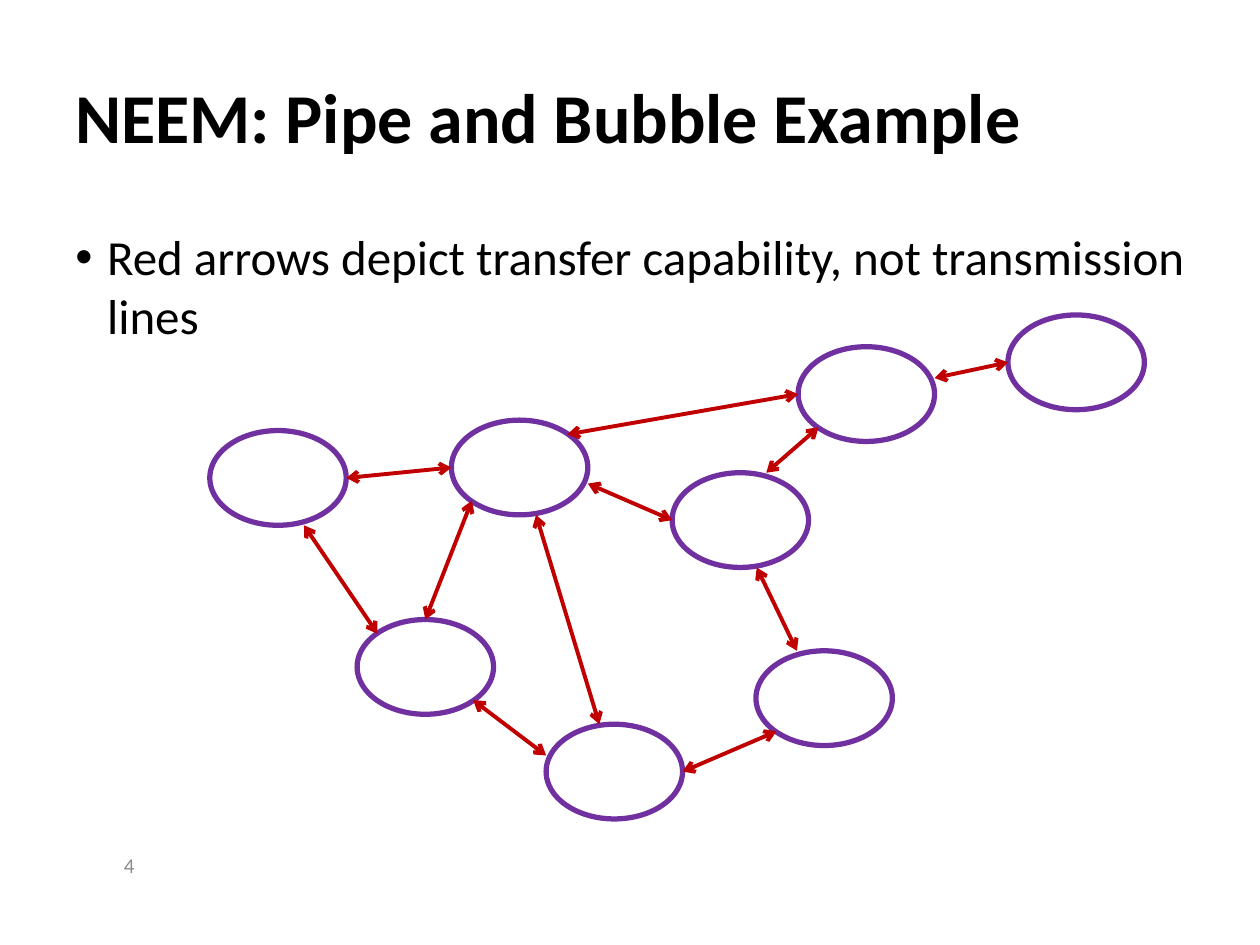
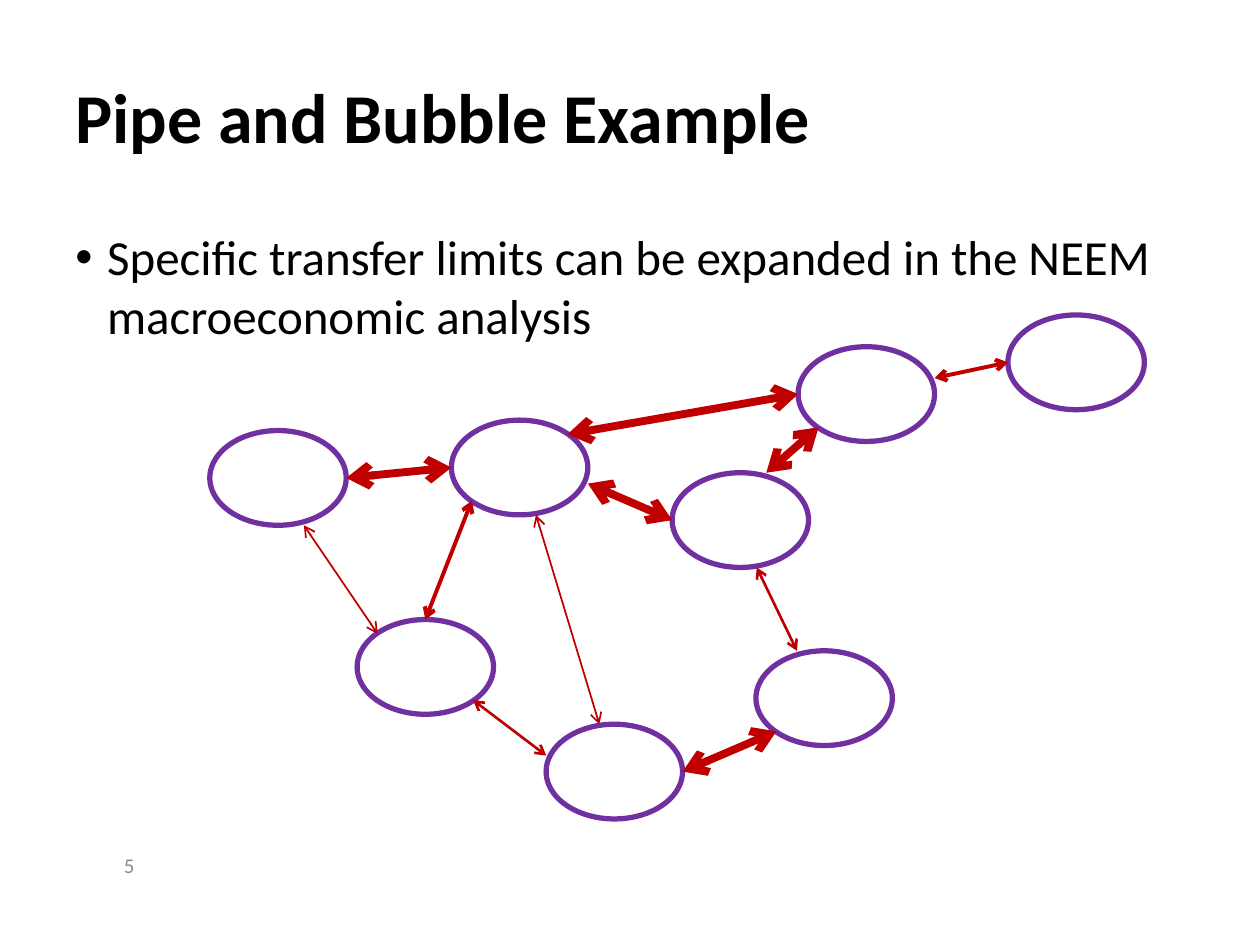
from lxml import etree
from pptx import Presentation
from pptx.dml.color import RGBColor
from pptx.enum.shapes import MSO_CONNECTOR, MSO_SHAPE
from pptx.enum.text import MSO_ANCHOR, PP_ALIGN
from pptx.oxml.ns import qn
from pptx.util import Cm, Pt

LINE, OVAL = MSO_CONNECTOR.STRAIGHT, MSO_SHAPE.OVAL
TOP, MID = MSO_ANCHOR.TOP, MSO_ANCHOR.MIDDLE
LEFT, RIGHT = PP_ALIGN.LEFT, PP_ALIGN.RIGHT

HUES = {"text": "000000", "page": "8C8C8C", "bubble": "7030A0", "pipe": "C00000"}

SLIDES = [
    {"title": "NEEM: Pipe and Bubble Example",
     "body": "Red arrows depict transfer capability, not transmission lines",
     "page": "4",
     "limits": [2.25] * 10},
    {"title": "Pipe and Bubble Example",
     "body": "Specific transfer limits can be expanded in the NEEM macroeconomic analysis",
     "page": "5",
     "limits": [4.5, 1.5, 4.5, 4.5, 2.25, 4.5, 1, 1.5, 4.5, 2.25, 1][:6]
     + [1, 1.5, 4.5, 2.25, 1]},
]
SLIDES[0]["limits"] = [2.25] * len(SLIDES[1]["limits"])

BOXES = {
    "title": {"at": (1.27, 0.85, 22.86, 2.96), "anchor": MID, "align": LEFT,
              "font": {"size": Pt(40), "bold": True}, "hue": "text"},
    "body": {"at": (1.27, 4.45, 22.86, 12), "anchor": TOP, "align": LEFT,
             "font": {"size": Pt(28)}, "hue": "text", "bullet": "•"},
    "page": {"at": (1.06, 16.93, 1.9, 1.02), "anchor": MID, "align": RIGHT,
             "font": {"size": Pt(12)}, "hue": "page"},
}

WIDE, HIGH = 2.75, 1.91
BUBBLES = {
    "A": (4.23, 8.68), "B": (7.2, 12.49), "C": (11.01, 14.6), "D": (13.55, 9.53),
    "E": (9.1, 8.47), "F": (16.09, 6.99), "G": (20.32, 6.35), "H": (15.24, 13.12),
}
SPOTS = {
    "top": (0.5, 0), "left": (0, 0.5), "right": (1, 0.5),
    "nw": (0.15, 0.15), "ne": (0.85, 0.15), "sw": (0.15, 0.85), "se": (0.85, 0.85),
    "top in": (0.3, 0), "top mid": (0.39, 0), "top out": (0.69, 0),
    "low mid": (0.62, 1), "low out": (0.69, 1),
    "left up": (0, 0.33), "right up": (1, 0.33), "right low": (1, 0.67),
}
PIPES = [
    ("F", "sw", "D", "top out"),
    ("D", "low mid", "H", "top in"),
    ("E", "ne", "F", "left"),
    ("E", "right low", "D", "left"),
    ("E", "sw", "B", "top"),
    ("E", "left", "A", "right"),
    ("A", "low out", "B", "nw"),
    ("B", "se", "C", "left up"),
    ("C", "right", "H", "sw"),
    ("F", "right up", "G", "left"),
    ("E", "low mid", "C", "top mid"),
]


def color(name):
    return RGBColor.from_string(HUES[name])


def add_text(slide, text, form):
    box = slide.shapes.add_textbox(*map(Cm, form["at"]))
    frame = box.text_frame
    frame.word_wrap = True
    frame.vertical_anchor = form["anchor"]
    para = frame.paragraphs[0]
    para.alignment = form["align"]
    if "bullet" in form:
        props = para._p.get_or_add_pPr()
        props.set("marL", str(Cm(0.64)))
        props.set("indent", str(-Cm(0.64)))
        etree.SubElement(props, qn("a:buFont")).set("typeface", "Arial")
        etree.SubElement(props, qn("a:buChar")).set("char", form["bullet"])
    run = para.add_run()
    run.text = text
    run.font.name = "Calibri"
    run.font.color.rgb = color(form["hue"])
    for key, value in form["font"].items():
        setattr(run.font, key, value)


def set_line(shape, hue, width):
    shape.line.color.rgb = color(hue)
    shape.line.width = Pt(width)


def add_bubble(slide, left, top):
    bubble = slide.shapes.add_shape(OVAL, Cm(left), Cm(top), Cm(WIDE), Cm(HIGH))
    bubble.shadow.inherit = False
    bubble.fill.background()
    set_line(bubble, "bubble", 3)


def find_spot(name, spot):
    left, top = BUBBLES[name]
    across, down = SPOTS[spot]
    return Cm(left + across * WIDE), Cm(top + down * HIGH)


def add_pipe(slide, start, begin, stop, end, width):
    pipe = slide.shapes.add_connector(LINE, *find_spot(start, begin), *find_spot(stop, end))
    set_line(pipe, "pipe", width)
    edge = pipe.line._get_or_add_ln()
    for tag in ("a:headEnd", "a:tailEnd"):
        etree.SubElement(edge, qn(tag)).set("type", "arrow")
    etree.SubElement(pipe._element.spPr, qn("a:effectLst"))


def main():
    deck = Presentation()
    deck.slide_width, deck.slide_height = Cm(25.4), Cm(19.05)
    for item in SLIDES:
        slide = deck.slides.add_slide(deck.slide_layouts[6])
        for part, form in BOXES.items():
            add_text(slide, item[part], form)
        for place in BUBBLES.values():
            add_bubble(slide, *place)
        for pipe, width in zip(PIPES, item["limits"]):
            add_pipe(slide, *pipe, width)
    deck.save("out.pptx")


if __name__ == "__main__":
    main()
